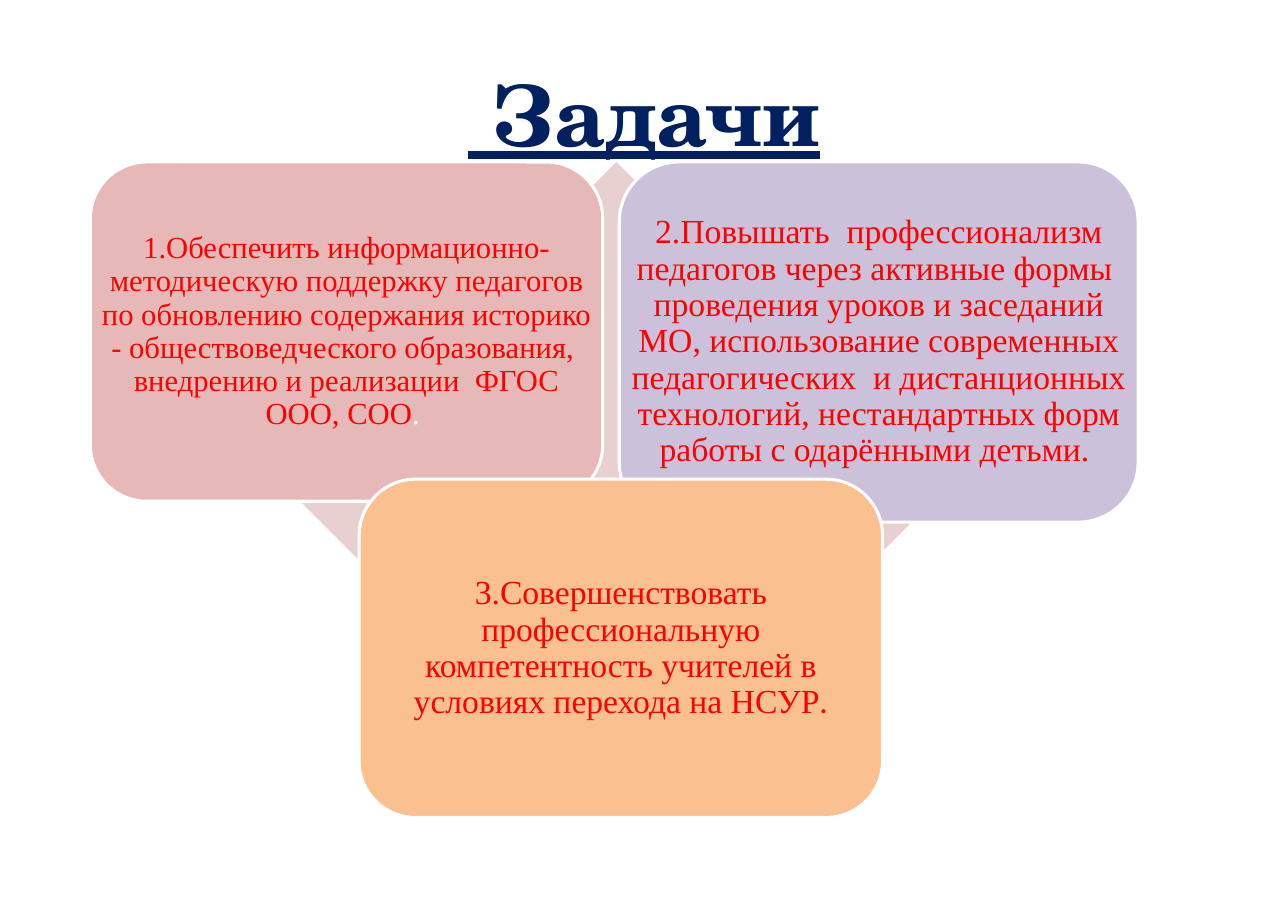
from dataclasses import dataclass

from pptx import Presentation
from pptx.dml.color import RGBColor
from pptx.enum.shapes import MSO_SHAPE as Shape
from pptx.enum.text import MSO_ANCHOR as Anchor, PP_ALIGN as Align
from pptx.shapes.autoshape import Shape as AutoShape
from pptx.slide import Slide
from pptx.util import Emu, Pt

PX = 9144
RED, WHITE, NAVY, ROSE = "FF0000", "FFFFFF", "002060", "E8D0D0"
SERIF, SANS, DISPLAY = "Times New Roman", "Calibri", "TeX Gyre Schola"


@dataclass(frozen=True)
class Box:
    """Position and size in px."""
    left: int
    top: int
    width: int
    height: int

    def emu(self) -> tuple[Emu, ...]:
        """Return the four lengths in EMU."""
        return tuple(Emu(n * PX) for n in (self.left, self.top, self.width, self.height))


@dataclass(frozen=True)
class Span:
    """A piece of text in one format."""
    text: str
    size: int
    font: str = SERIF
    color: str = RED
    heading: bool = False


@dataclass(frozen=True)
class Task:
    """A card that states one task."""
    box: Box
    fill: str
    inset: int
    spans: tuple[Span, ...]


TITLE = Span(" Задачи", 55, DISPLAY, NAVY, True)
TASKS = (
    Task(Box(82, 147, 465, 308), "E6B9B8", 8, (
        Span("1.Обеспечить информационно-методическую поддержку педагогов по обновлению "
             "содержания историко - обществоведческого образования,  внедрению и "
             "реализации  ФГОС ООО, СОО", 20),
        Span(". ", 20, color=WHITE))),
    Task(Box(562, 147, 471, 327), "CCC1DA", 9, (
        Span("2.Повышать  профессионализм педагогов через активные формы  проведения "
             "уроков и заседаний МО, использование современных педагогических  и "
             "дистанционных технологий, нестандартных форм работы с одарёнными детьми. ", 22),)),
    Task(Box(326, 435, 475, 307), "FAC090", 9, (
        Span("3.Совершенствовать профессиональную компетентность учителей в условиях "
             "перехода на НСУР", 22),
        Span(".", 22, SANS))),
)


def rgb(color: str) -> RGBColor:
    """Turn a hex string into a colour."""
    return RGBColor.from_string(color)


def add_figure(s: Slide, kind: Shape, box: Box, fill: str) -> AutoShape:
    """Draw a filled shape without shadow or line."""
    sp = s.shapes.add_shape(kind, *box.emu())
    sp.shadow.inherit = False
    sp.fill.solid()
    sp.fill.fore_color.rgb = rgb(fill)
    sp.line.fill.background()
    return sp


def add_text(s: Slide, box: Box, spans: tuple[Span, ...], inset: int, spacing: float) -> None:
    """Write one centred paragraph."""
    tf = s.shapes.add_textbox(*box.emu()).text_frame
    tf.word_wrap = True
    tf.vertical_anchor = Anchor.MIDDLE
    tf.margin_left = tf.margin_right = tf.margin_top = tf.margin_bottom = Emu(inset * PX)
    p = tf.paragraphs[0]
    p.alignment = Align.CENTER
    p.line_spacing = spacing
    for span in spans:
        r = p.add_run()
        r.text = span.text
        r.font.name = span.font
        r.font.size = Pt(span.size)
        r.font.color.rgb = rgb(span.color)
        r.font.bold = r.font.underline = span.heading


def add_task(s: Slide, task: Task) -> None:
    """Draw a rounded card and its text across the full width."""
    sp = add_figure(s, Shape.ROUNDED_RECTANGLE, task.box, task.fill)
    sp.line.color.rgb = rgb(WHITE)
    sp.line.width = Pt(2)
    add_text(s, task.box, task.spans, task.inset, 0.9)


def main() -> None:
    """Build and save the slide."""
    prs = Presentation()
    prs.slide_width, prs.slide_height = Emu(1169 * PX), Emu(826 * PX)
    s = prs.slides.add_slide(prs.slide_layouts[6])
    add_text(s, Box(58, 33, 1053, 138), (TITLE,), 0, 1.0)
    add_figure(s, Shape.DIAMOND, Box(262, 147, 595, 595), ROSE)
    for task in TASKS:
        add_task(s, task)
    prs.save("out.pptx")


if __name__ == "__main__":
    main()
